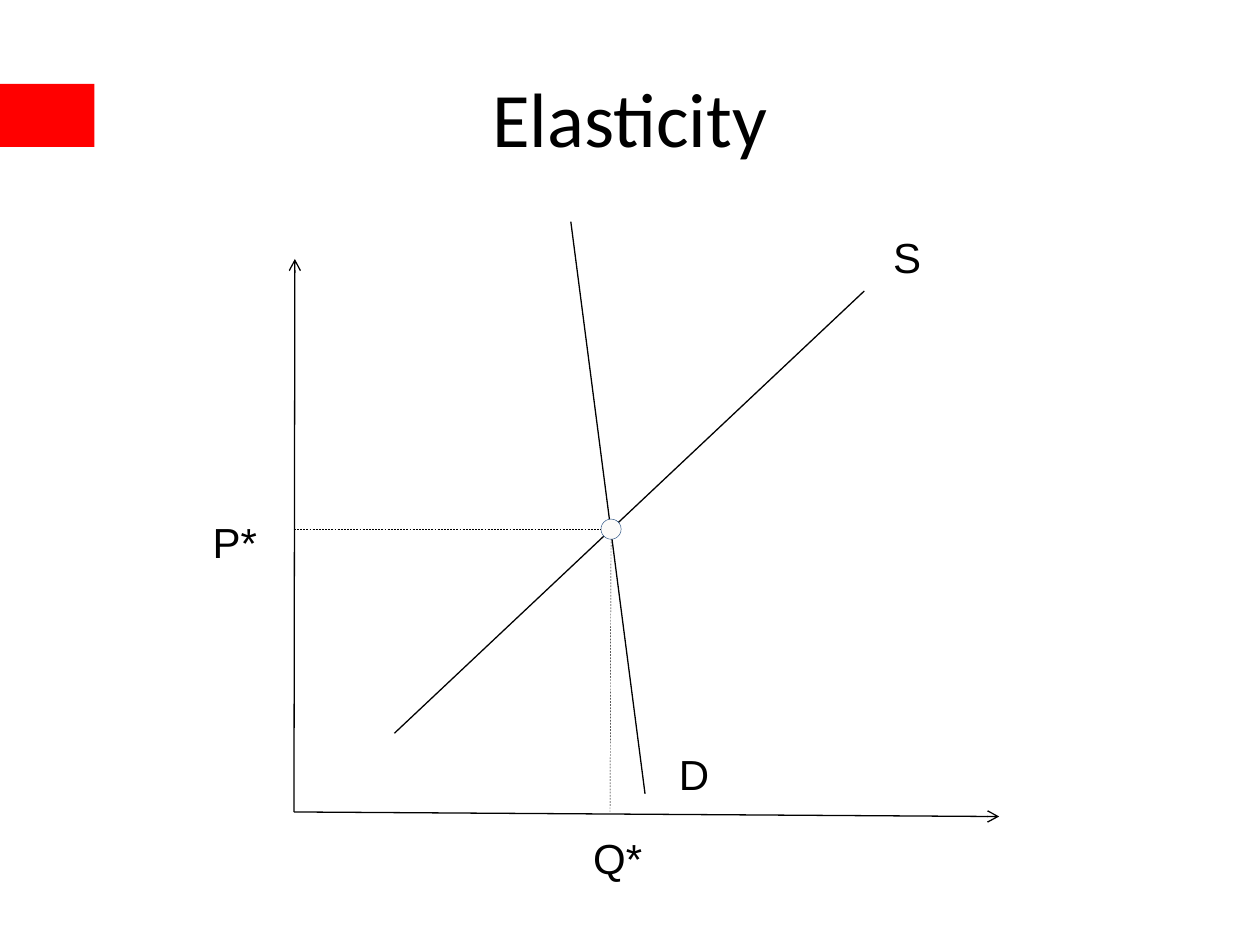
from lxml.etree import SubElement
from pptx import Presentation
from pptx.dml.color import RGBColor
from pptx.enum.dml import MSO_LINE
from pptx.enum.shapes import MSO_CONNECTOR, MSO_SHAPE
from pptx.enum.text import MSO_ANCHOR, PP_ALIGN
from pptx.oxml.ns import qn
from pptx.util import Pt

BLACK = "000000"


def color(hex_value):
    return RGBColor.from_string(hex_value)


def add_filled(slide, preset, left, top, width, height, fill):
    shape = slide.shapes.add_shape(preset, Pt(left), Pt(top), Pt(width), Pt(height))
    shape.shadow.inherit = False
    shape.fill.solid()
    shape.fill.fore_color.rgb = color(fill)
    shape.line.fill.background()
    return shape


def add_text(slide, text, left, top, width, height, size, font):
    box = slide.shapes.add_textbox(Pt(left), Pt(top), Pt(width), Pt(height))
    frame = box.text_frame
    frame.text = text
    run_font = frame.paragraphs[0].runs[0].font
    run_font.name = font
    run_font.size = Pt(size)
    run_font.color.rgb = color(BLACK)
    return frame


def add_line(slide, start, end, weight=0.75, dashed=False, arrow=False):
    line = slide.shapes.add_connector(
        MSO_CONNECTOR.STRAIGHT, *(Pt(value) for value in (*start, *end)))
    line.line.color.rgb = color(BLACK)
    line.line.width = Pt(weight)
    if dashed:
        line.line.dash_style = MSO_LINE.DASH
    if arrow:
        SubElement(line.line._get_or_add_ln(), qn("a:tailEnd"), type="arrow")
    SubElement(line._element.spPr, qn("a:effectLst"))


def add_heading(slide, left, top, width, height):
    frame = add_text(slide, "Elasticity", left, top, width, height, 44, "Calibri")
    frame.word_wrap = True
    frame.vertical_anchor = MSO_ANCHOR.MIDDLE
    frame.paragraphs[0].alignment = PP_ALIGN.CENTER


def add_market_graph(slide, left, top, width, height):
    """Draw supply and demand; the box is spanned by the two axes."""
    def at(x, y):
        return left + x, top + y

    price, quantity = 154.4, 181.2
    add_line(slide, at(quantity, price), at(quantity - 0.6, height), 0.25, dashed=True)
    add_line(slide, at(200.6, 305.6), at(158.2, -21.3))  # demand
    add_line(slide, at(0, height), at(width, height + 2.6), arrow=True)
    add_line(slide, at(0, height), at(0.5, 0), arrow=True)
    add_line(slide, at(57.4, 271), at(325.9, 18.3))  # supply
    add_line(slide, at(0, price), at(quantity, price), 0.25, dashed=True)

    diameter = 11.5
    equilibrium = add_filled(
        slide, MSO_SHAPE.OVAL, *at(quantity - diameter / 2, price - diameter / 2),
        diameter, diameter, "FCFBF9")
    equilibrium.line.color.rgb = color("1F497D")
    equilibrium.line.width = Pt(0.25)

    labels = [
        ("P*", -53.5, 149.4, 40.3),
        ("Q*", 163.9, 330, 42.5),
        ("S", 335.3, -13.4, 31),
        ("D", 212.9, 281.8, 32.4),
    ]
    for text, x, y, label_width in labels:
        frame = add_text(slide, text, *at(x, y), label_width, 30.2, 24, "Arial")
        frame.word_wrap = False
        frame.paragraphs[0].line_spacing = 0.8


def main():
    presentation = Presentation()
    presentation.slide_width = Pt(720)
    presentation.slide_height = Pt(540)
    slide = presentation.slides.add_slide(presentation.slide_layouts[6])
    add_filled(slide, MSO_SHAPE.RECTANGLE, 0, 48, 54, 36, "FF0000")
    add_heading(slide, 36, 21.6, 648, 90)
    add_market_graph(slide, 168, 148, 403, 316)
    presentation.save("out.pptx")


if __name__ == "__main__":
    main()
